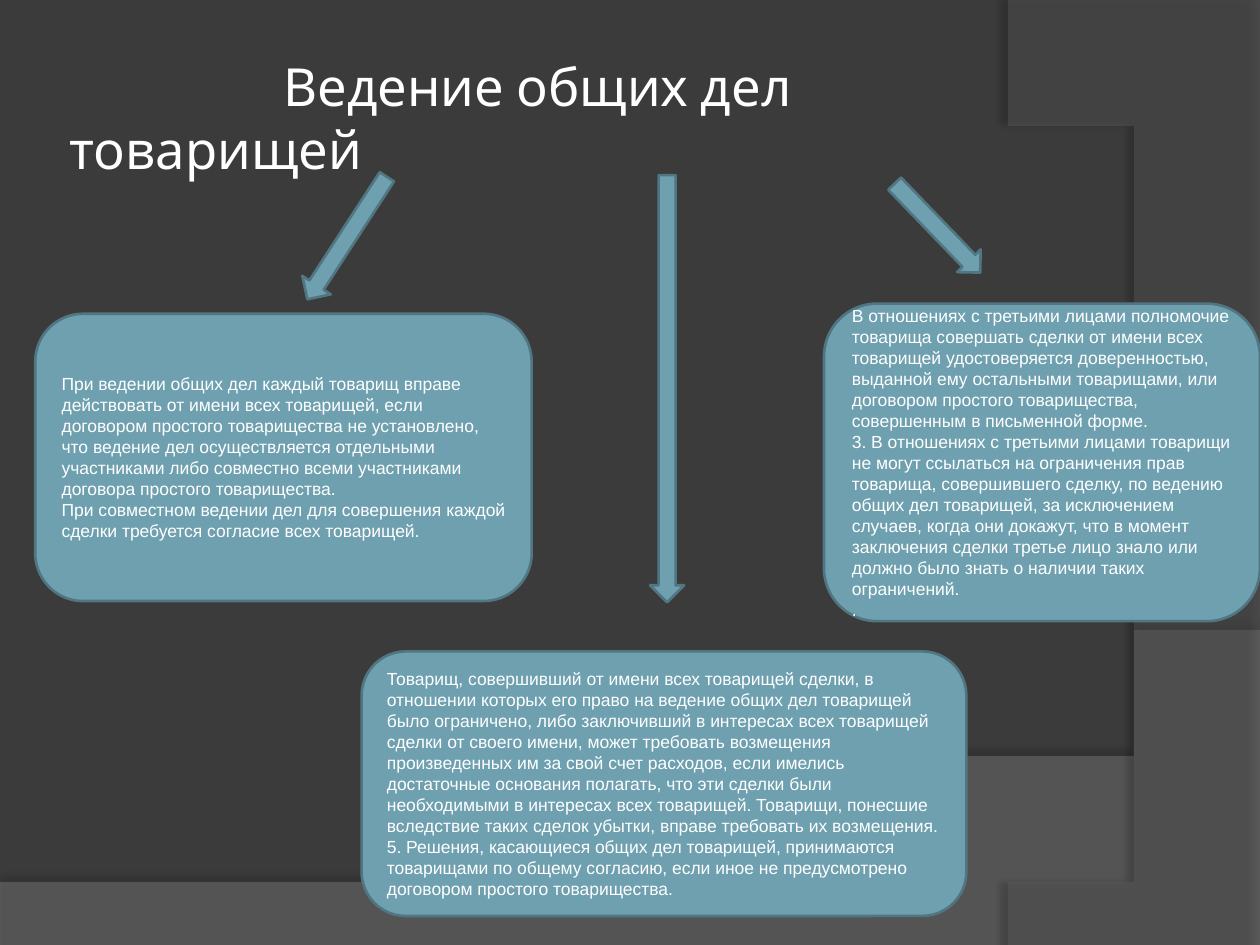
from lxml import etree
from pptx import Presentation
from pptx.dml.color import RGBColor
from pptx.enum.shapes import MSO_SHAPE
from pptx.enum.text import MSO_ANCHOR, MSO_AUTO_SIZE, PP_ALIGN
from pptx.oxml.ns import qn
from pptx.util import Inches, Pt

ROUNDED, DOWN_ARROW = MSO_SHAPE.ROUNDED_RECTANGLE, MSO_SHAPE.DOWN_ARROW
MIDDLE, LEFT, NO_FIT = MSO_ANCHOR.MIDDLE, PP_ALIGN.LEFT, MSO_AUTO_SIZE.NONE
CURVE_STEPS = 40


def color(hex_value):
    return RGBColor.from_string(hex_value)


def paint(shape, fill, line=None):
    shape.shadow.inherit = False
    shape.fill.solid()
    shape.fill.fore_color.rgb = color(fill)
    if line:
        shape.line.color.rgb = color(line)
        shape.line.width = Pt(1.5)
    else:
        shape.line.fill.background()


deck = Presentation()
deck.slide_width, deck.slide_height = Inches(10), Inches(7.5)
page = deck.slides.add_slide(deck.slide_layouts[5])
page.background.fill.solid()
page.background.fill.fore_color.rgb = color("3B3B3B")

# Background waves: straight corners, then one Bezier edge back to the start
waves = [
    {"corners": [(0, 7.05), (0, 7.51), (10, 7.51), (10, 5.2)],
     "curve": [(10, 5.2), (5.59, 7.29), (3.91, 7.19), (0, 7.05)],
     "fill": "7F7F7F", "alpha": 45,
     "shadow": {"alpha": 35, "blur": 4, "distance": 3.5, "angle": 270}},
    {"corners": [(8, 0), (10, 0.02), (10, 7.5), (8.21, 7.5)],
     "curve": [(8.21, 7.5), (9.35, 6.19), (10.18, 3), (8, 0)],
     "fill": "5E5E5E", "alpha": 40,
     "shadow": {"alpha": 45, "blur": 4, "distance": 4, "angle": 180}},
]
for wave in waves:
    points = list(wave["corners"])
    for step in range(1, CURVE_STEPS):
        t = step / CURVE_STEPS
        weights = ((1 - t) ** 3, 3 * t * (1 - t) ** 2, 3 * t ** 2 * (1 - t), t ** 3)
        points.append([sum(w * point[axis] for w, point in zip(weights, wave["curve"]))
                       for axis in (0, 1)])
    builder = page.shapes.build_freeform(*points[0], scale=Inches(1))
    builder.add_line_segments(points[1:], close=True)
    shape = builder.convert_to_shape()
    paint(shape, wave["fill"])
    properties = shape._element.spPr
    fill_color = properties.find(qn("a:solidFill"))[0]
    etree.SubElement(fill_color, qn("a:alpha"), val=str(wave["alpha"] * 1000))
    shadow = wave["shadow"]
    outer = etree.SubElement(
        properties.find(qn("a:effectLst")), qn("a:outerShdw"),
        blurRad=str(Pt(shadow["blur"])), dist=str(Pt(shadow["distance"])),
        dir=str(shadow["angle"] * 60000), algn="ctr", rotWithShape="0")
    shadow_color = etree.SubElement(outer, qn("a:srgbClr"), val="000000")
    etree.SubElement(shadow_color, qn("a:alpha"), val=str(shadow["alpha"] * 1000))

# Title, with its first line indented
title = page.shapes.title
title.left, title.top, title.width, title.height = map(Inches, (0.5, 0.3, 8.17, 1.25))
frame = title.text_frame
frame_format = {"word_wrap": True, "auto_size": NO_FIT, "vertical_anchor": MIDDLE,
                "margin_left": Inches(0.05), "margin_right": Inches(0.05),
                "margin_top": Inches(0.05), "margin_bottom": Inches(0.05)}
for name, value in frame_format.items():
    setattr(frame, name, value)
frame.text = "Ведение общих дел товарищей"
para = frame.paragraphs[0]
para.alignment = LEFT
para._p.get_or_add_pPr().set("indent", str(Inches(1.7)))
para.font.size, para.font.name = Pt(30), "Karla"
para.font.color.rgb = color("FFFFFF")

# Text boxes
boxes = [
    ((0.28, 2.49, 3.94, 2.28), [
        "При ведении общих дел каждый товарищ вправе действовать от имени всех товарищей, "
        "если договором простого товарищества не установлено, что ведение дел осуществляется "
        "отдельными участниками либо совместно всеми участниками договора простого "
        "товарищества.",
        "При совместном ведении дел для совершения каждой сделки требуется согласие всех "
        "товарищей."]),
    ((6.54, 2.41, 3.46, 2.52), [
        "В отношениях с третьими лицами полномочие товарища совершать сделки от имени всех "
        "товарищей удостоверяется доверенностью, выданной ему остальными товарищами, или "
        "договором простого товарищества, совершенным в письменной форме.",
        "3. В отношениях с третьими лицами товарищи не могут ссылаться на ограничения прав "
        "товарища, совершившего сделку, по ведению общих дел товарищей, за исключением "
        "случаев, когда они докажут, что в момент заключения сделки третье лицо знало или "
        "должно было знать о наличии таких ограничений.",
        "."]),
    ((2.87, 5.17, 4.8, 2.1), [
        "Товарищ, совершивший от имени всех товарищей сделки, в отношении которых его право "
        "на ведение общих дел товарищей было ограничено, либо заключивший в интересах всех "
        "товарищей сделки от своего имени, может требовать возмещения произведенных им за "
        "свой счет расходов, если имелись достаточные основания полагать, что эти сделки "
        "были необходимыми в интересах всех товарищей. Товарищи, понесшие вследствие таких "
        "сделок убытки, вправе требовать их возмещения.",
        "5. Решения, касающиеся общих дел товарищей, принимаются товарищами по общему "
        "согласию, если иное не предусмотрено договором простого товарищества."]),
]
for place, texts in boxes:
    box = page.shapes.add_shape(ROUNDED, *map(Inches, place))
    paint(box, "6EA0B0", "517682")
    box.text_frame.word_wrap = True
    box.text_frame.vertical_anchor = MIDDLE
    box.text_frame.text = "\n".join(texts)
    for para in box.text_frame.paragraphs:
        para.alignment = LEFT
        para.font.size, para.font.name = Pt(10), "Arial"
        para.font.color.rgb = color("FFFFFF")

# Arrows from the title to the boxes: place, rotation, shaft width
arrows = [
    ((2.62, 1.31, 0.27, 1.16), 33, 0.5),
    ((7.31, 1.32, 0.26, 0.98), 316.1, 0.54),
    ((5.16, 1.39, 0.27, 3.39), 0, 0.5),
]
for place, rotation, shaft in arrows:
    arrow = page.shapes.add_shape(DOWN_ARROW, *map(Inches, place))
    arrow.rotation = rotation
    arrow.adjustments[0] = shaft
    paint(arrow, "6EA0B0", "517682")

deck.save("out.pptx")
